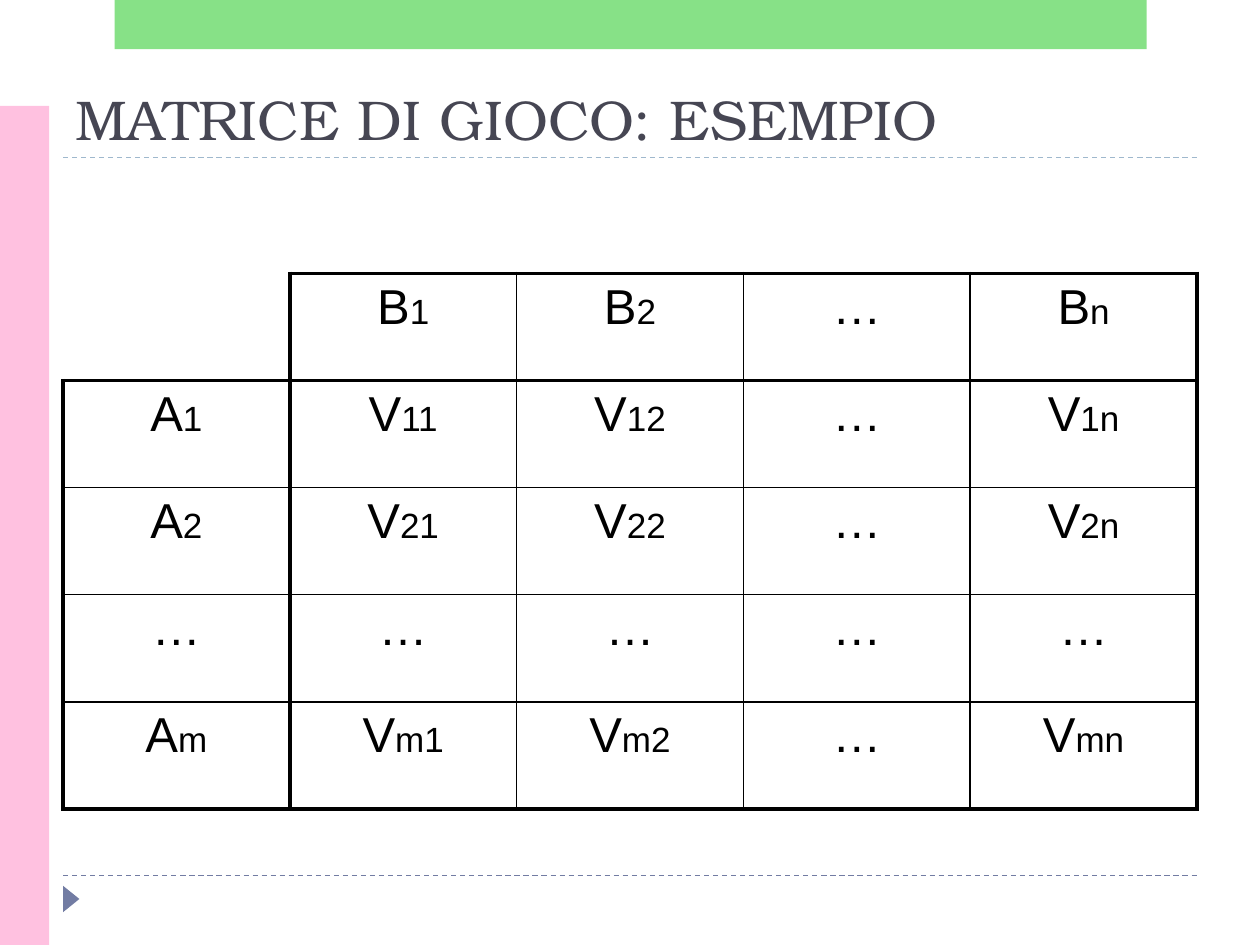
"""Build the game matrix example slide on a grid of 100 columns by 75 rows."""
from dataclasses import dataclass

from lxml.etree import SubElement
from pptx import Presentation
from pptx.dml.color import RGBColor
from pptx.enum.dml import MSO_LINE
from pptx.enum.shapes import MSO_CONNECTOR, MSO_SHAPE
from pptx.enum.text import MSO_ANCHOR, PP_ALIGN
from pptx.oxml.ns import qn
from pptx.slide import Slide
from pptx.table import _Cell
from pptx.text.text import _Run
from pptx.util import Inches, Length, Pt

COLORS = {
    "ink": "000000",
    "title": "464653",
    "accent": "727CA3",
    "rule": "9FB8CD",
    "pink": "FFC1E0",
    "green": "62D862",
}
UNIT = Inches(0.1)
COLUMNS, ROWS = 100, 75
THICK, THIN = Pt(2.25), Pt(1)


@dataclass
class Area:
    column: float
    row: float
    columns: float
    rows: float

    def lengths(self) -> list[Length]:
        return [grid(n) for n in (self.column, self.row, self.columns, self.rows)]


@dataclass
class Decoration:
    kind: MSO_SHAPE
    area: Area
    color: str
    rotation: int = 0
    opacity: int = 100


@dataclass
class Rule:
    row: float
    color: str


RULES = [Rule(69.5, "accent"), Rule(12.5, "rule")]
DECORATIONS = [
    Decoration(MSO_SHAPE.ISOSCELES_TRIANGLE, Area(4.6, 70.7, 2.1, 1.3), "accent", rotation=90),
    Decoration(MSO_SHAPE.RECTANGLE, Area(0, 8.4, 3.9, 66.6), "pink"),
    Decoration(MSO_SHAPE.RECTANGLE, Area(9.1, 0, 81.9, 3.9), "green", opacity=76),
]
TITLE_AREA = Area(5, 5.5, 90, 7)
TABLE_AREA = Area(5, 21.7, 90, 42.5)
MATRIX = [
    ["", "B1", "B2", "…", "Bn"],
    ["A1", "V11", "V12", "…", "V1n"],
    ["A2", "V21", "V22", "…", "V2n"],
    ["…", "…", "…", "…", "…"],
    ["Am", "Vm1", "Vm2", "…", "Vmn"],
]


def grid(count: float) -> Length:
    return Length(round(count * UNIT))


def rgb(name: str) -> RGBColor:
    return RGBColor.from_string(COLORS[name])


def style_span(span: _Run, size: int, face: str, color: str) -> None:
    span.font.size = Pt(size)
    span.font.name = face
    span.font.color.rgb = rgb(color)


def draw_rule(page: Slide, rule: Rule) -> None:
    connector = page.shapes.add_connector(
        MSO_CONNECTOR.STRAIGHT, grid(5), grid(rule.row), grid(95), grid(rule.row))
    connector.line.color.rgb = rgb(rule.color)
    connector.line.width = Pt(0.75)
    connector.line.dash_style = MSO_LINE.DASH
    SubElement(connector._element.spPr, qn("a:effectLst"))


def draw_decoration(page: Slide, item: Decoration) -> None:
    shape = page.shapes.add_shape(item.kind, *item.area.lengths())
    shape.shadow.inherit = False
    shape.rotation = item.rotation
    shape.fill.solid()
    shape.fill.fore_color.rgb = rgb(item.color)
    shape.line.fill.background()
    if item.opacity < 100:
        color = shape._element.spPr.find(f"{qn('a:solidFill')}/{qn('a:srgbClr')}")
        SubElement(color, qn("a:alpha"), val=str(item.opacity * 1000))


def draw_title(page: Slide, text: str) -> None:
    box = page.shapes.add_textbox(*TITLE_AREA.lengths())
    frame = box.text_frame
    frame.word_wrap = True
    frame.vertical_anchor = MSO_ANCHOR.BOTTOM
    frame.text = text
    style_span(frame.paragraphs[0].runs[0], 32, "TeX Gyre Bonum", "title")


def set_border(cell: _Cell, side: str, width: Length | None) -> None:
    line = SubElement(cell._tc.get_or_add_tcPr(), qn(f"a:ln{side}"))
    if width is None:
        SubElement(line, qn("a:noFill"))
        return
    line.set("w", str(width))
    SubElement(SubElement(line, qn("a:solidFill")), qn("a:srgbClr"), val=COLORS["ink"])


def edge_width(edge: int, last: int) -> Length:
    return THICK if edge in (0, 1, last) else THIN


def fill_cell(cell: _Cell, row: int, column: int, text: str) -> None:
    size = len(MATRIX)
    edges = {"L": column, "R": column + 1, "T": row, "B": row + 1}
    for side, edge in edges.items():
        is_open = row == column == edge == 0
        set_border(cell, side, None if is_open else edge_width(edge, size))
    cell.fill.background()
    para = cell.text_frame.paragraphs[0]
    para.alignment = PP_ALIGN.CENTER
    for part, points in ((text[:1], 28), (text[1:], 20)):
        if part:
            span = para.add_run()
            span.text = part
            style_span(span, points, "Arial", "ink")


def draw_matrix(page: Slide) -> None:
    size = len(MATRIX)
    table = page.shapes.add_table(size, size, *TABLE_AREA.lengths()).table
    table.first_row = table.horz_banding = False
    for row, texts in enumerate(MATRIX):
        for column, text in enumerate(texts):
            fill_cell(table.cell(row, column), row, column, text)


def main() -> None:
    deck = Presentation()
    deck.slide_width, deck.slide_height = grid(COLUMNS), grid(ROWS)
    page = deck.slides.add_slide(deck.slide_layouts[6])
    for rule in RULES:
        draw_rule(page, rule)
    for item in DECORATIONS:
        draw_decoration(page, item)
    draw_title(page, "MATRICE DI GIOCO: ESEMPIO")
    draw_matrix(page)
    deck.save("out.pptx")


if __name__ == "__main__":
    main()
